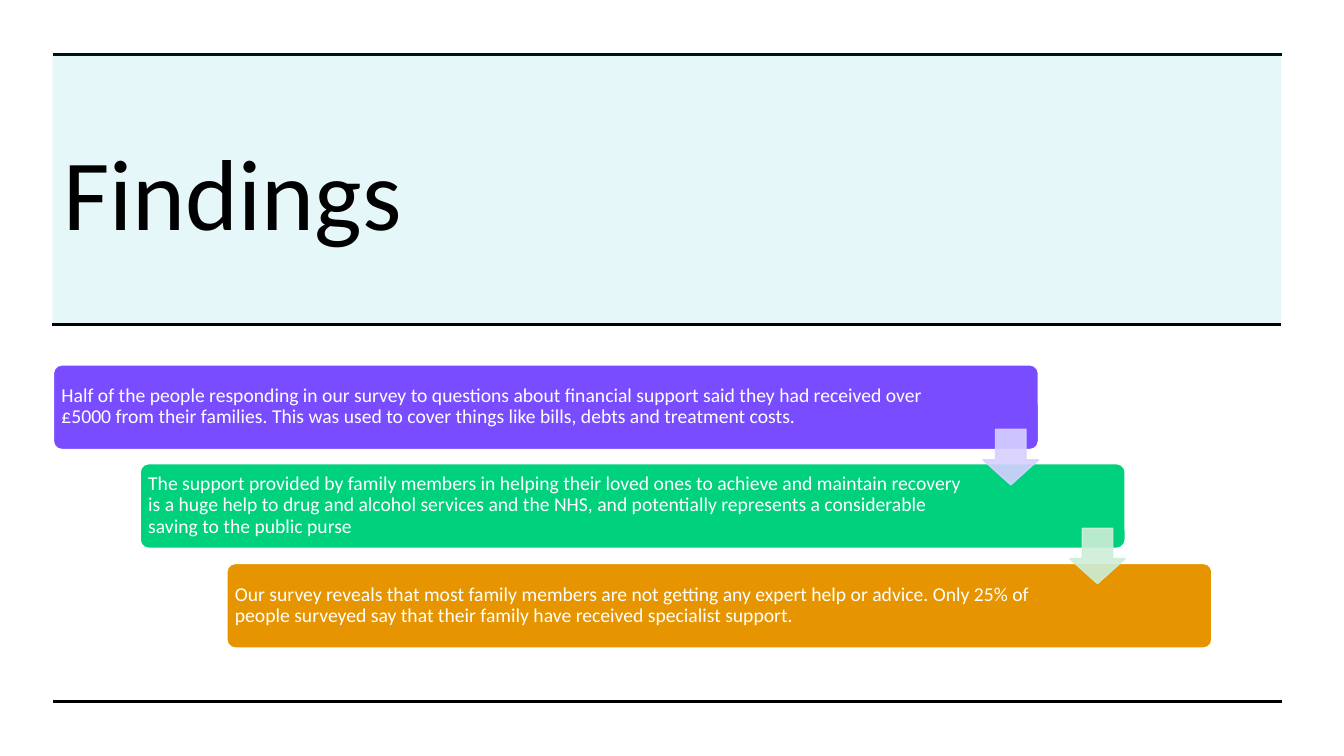
from dataclasses import dataclass

from lxml.etree import SubElement
from pptx import Presentation
from pptx.dml.color import RGBColor
from pptx.enum.shapes import MSO_CONNECTOR as Connector, MSO_SHAPE as Shape
from pptx.enum.text import MSO_ANCHOR as Anchor, MSO_AUTO_SIZE as AutoSize, PP_ALIGN as Align
from pptx.oxml.ns import qn
from pptx.util import Emu, Pt

EMU_PER_PX = 9144  # 100 px to the inch
TITLE_ONLY = 5


@dataclass(frozen=True)
class Theme:
    font: str = "Calibri"
    title_size: int = 72
    body_size: int = 14
    rule_width: float = 2.25
    outline_width: float = 1
    ink: str = "000000"
    paper: str = "FFFFFF"
    band: str = "00BAC8"
    step_fills: tuple = ("794DFF", "00D17D", "E69500")
    arrow_fills: tuple = ("D7D0FF", "CCEED7")


THEME = Theme()

FINDINGS = (
    "Half of the people responding in our survey to questions about financial support "
    "said they had received over £5000 from their families. This was used to cover "
    "things like bills, debts and treatment costs.",
    "The support provided by family members in helping their loved ones to achieve and "
    "maintain recovery is a huge help to drug and alcohol services and the NHS, and "
    "potentially represents a considerable saving to the public purse",
    "Our survey reveals that most family members are not getting any expert help or "
    "advice. Only 25% of people surveyed say that their family have received "
    "specialist support.",
)


def px(*lengths):
    return [Emu(length * EMU_PER_PX) for length in lengths]


def paint(color_format, color, opacity=100):
    """Fill a solid fill or line with a colour, see-through below 100 % opacity."""
    color_format.solid()
    color_format.fore_color.rgb = RGBColor.from_string(color)
    if opacity < 100:
        color_element = color_format._xPr.find(".//" + qn("a:srgbClr"))
        SubElement(color_element, qn("a:alpha"), val=str(opacity * 1000))


def add_block(slide, kind, box, color, opacity=100, outline=None):
    shape = slide.shapes.add_shape(kind, *px(*box))
    shape.shadow.inherit = False
    paint(shape.fill, color, opacity)
    if outline:
        paint(shape.line.fill, outline, opacity)
        shape.line.width = Pt(THEME.outline_width)
    else:
        shape.line.fill.background()
    return shape


def add_rule(slide, left, top, width):
    rule = slide.shapes.add_connector(Connector.STRAIGHT, *px(left, top, left + width, top))
    rule.line.color.rgb = RGBColor.from_string(THEME.ink)
    rule.line.width = Pt(THEME.rule_width)
    SubElement(rule.element.spPr, qn("a:effectLst"))


def write(text_frame, text, size, color):
    text_frame.text = text
    text_frame.word_wrap = True
    text_frame.auto_size = AutoSize.NONE
    text_frame.vertical_anchor = Anchor.MIDDLE
    paragraph = text_frame.paragraphs[0]
    paragraph.alignment = Align.LEFT
    font = paragraph.runs[0].font
    font.name, font.size = THEME.font, Pt(size)
    font.color.rgb = RGBColor.from_string(color)
    return paragraph


def add_title_band(slide, box, text):
    left, top, width, height = box
    add_rule(slide, left + 1, top + 1, width)
    band = add_block(slide, Shape.RECTANGLE, box, THEME.band, opacity=10)
    add_rule(slide, left, top + height, width)
    title = slide.shapes.title
    band.element.addnext(title.element)
    title.left, title.top, title.width, title.height = px(left + 1, top + 54, 920, 163)
    write(title.text_frame, text, THEME.title_size, THEME.ink)


def add_step(slide, box, text, text_width, color):
    left, top, width, height = box
    block = add_block(slide, Shape.ROUNDED_RECTANGLE, box, color, outline=THEME.paper)
    block.adjustments[0] = 0.1
    label = slide.shapes.add_textbox(*px(left + 2, top + 2, text_width, height - 5))
    frame = label.text_frame
    frame.margin_left, frame.margin_top, frame.margin_right, frame.margin_bottom = px(6, 6, 6, 6)
    write(frame, text, THEME.body_size, THEME.paper).line_spacing = 0.9


def add_staircase(slide, box):
    """Place the findings as steps going down to the right, joined by arrows."""
    left, top, width, height = box
    step_width, step_height, arrow_size = 977, 84, 55
    gaps = len(FINDINGS) - 1
    shift_x = (width - step_width) / gaps
    shift_y = (height - step_height) / gaps
    for index, (text, color) in enumerate(zip(FINDINGS, THEME.step_fills)):
        step = (round(left + index * shift_x), round(top + index * shift_y),
                step_width, step_height)
        add_step(slide, step, text, 831 if index else 886, color)
    for index, color in enumerate(THEME.arrow_fills):
        arrow_box = (round(left + step_width - arrow_size + index * shift_x),
                     round(top + 64 + index * shift_y), arrow_size, arrow_size)
        arrow = add_block(slide, Shape.DOWN_ARROW, arrow_box, color, opacity=90, outline=color)
        arrow.adjustments[0], arrow.adjustments[1] = 0.55, 0.45


def build_findings_slide(presentation):
    slide = presentation.slides.add_slide(presentation.slide_layouts[TITLE_ONLY])
    add_title_band(slide, (52, 53, 1219, 269), "Findings")
    add_rule(slide, 53, 696, 1219)
    add_staircase(slide, (53, 362, 1149, 281))


def main():
    presentation = Presentation()
    presentation.slide_width, presentation.slide_height = px(1333, 750)
    build_findings_slide(presentation)
    presentation.save("out.pptx")


if __name__ == "__main__":
    main()
